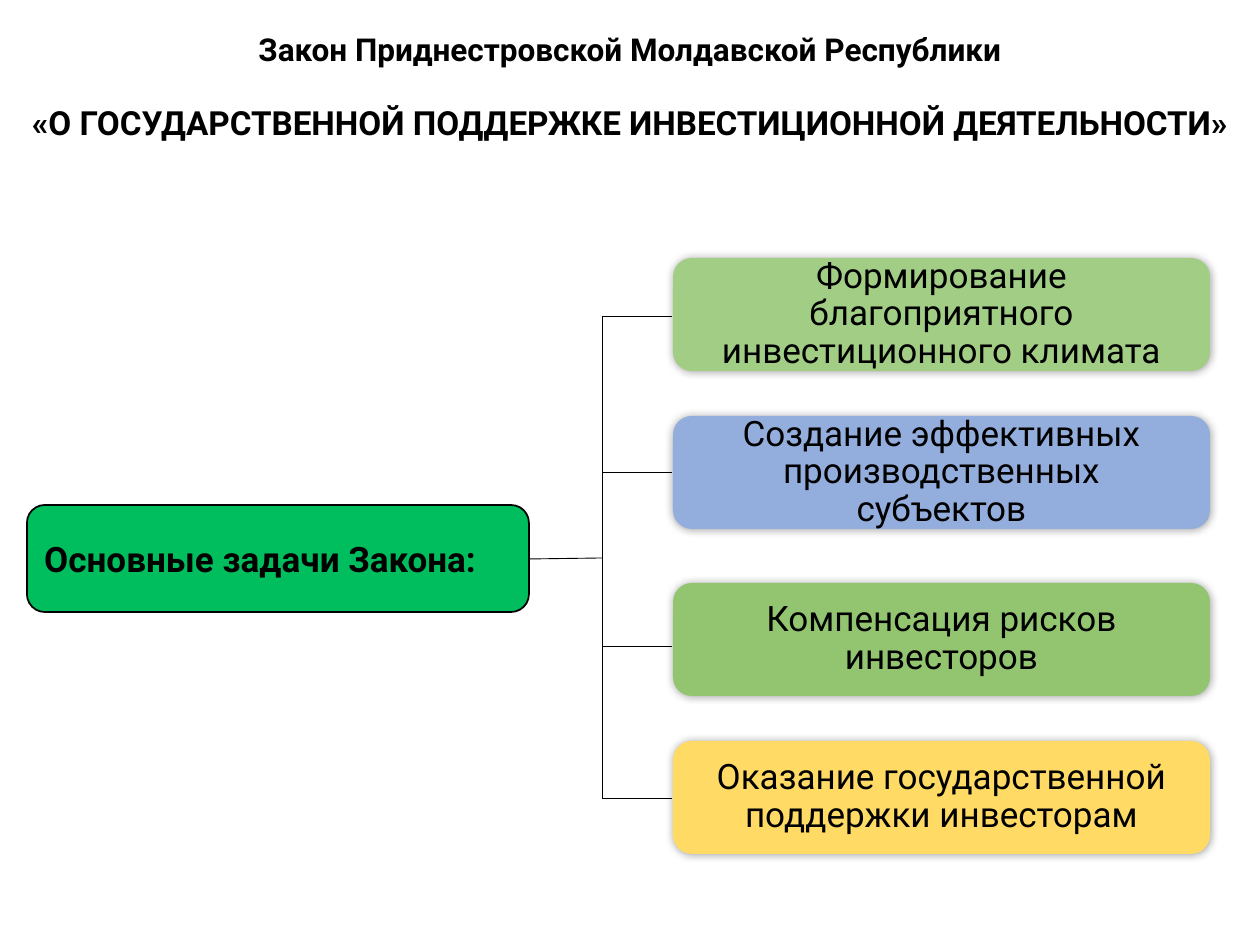
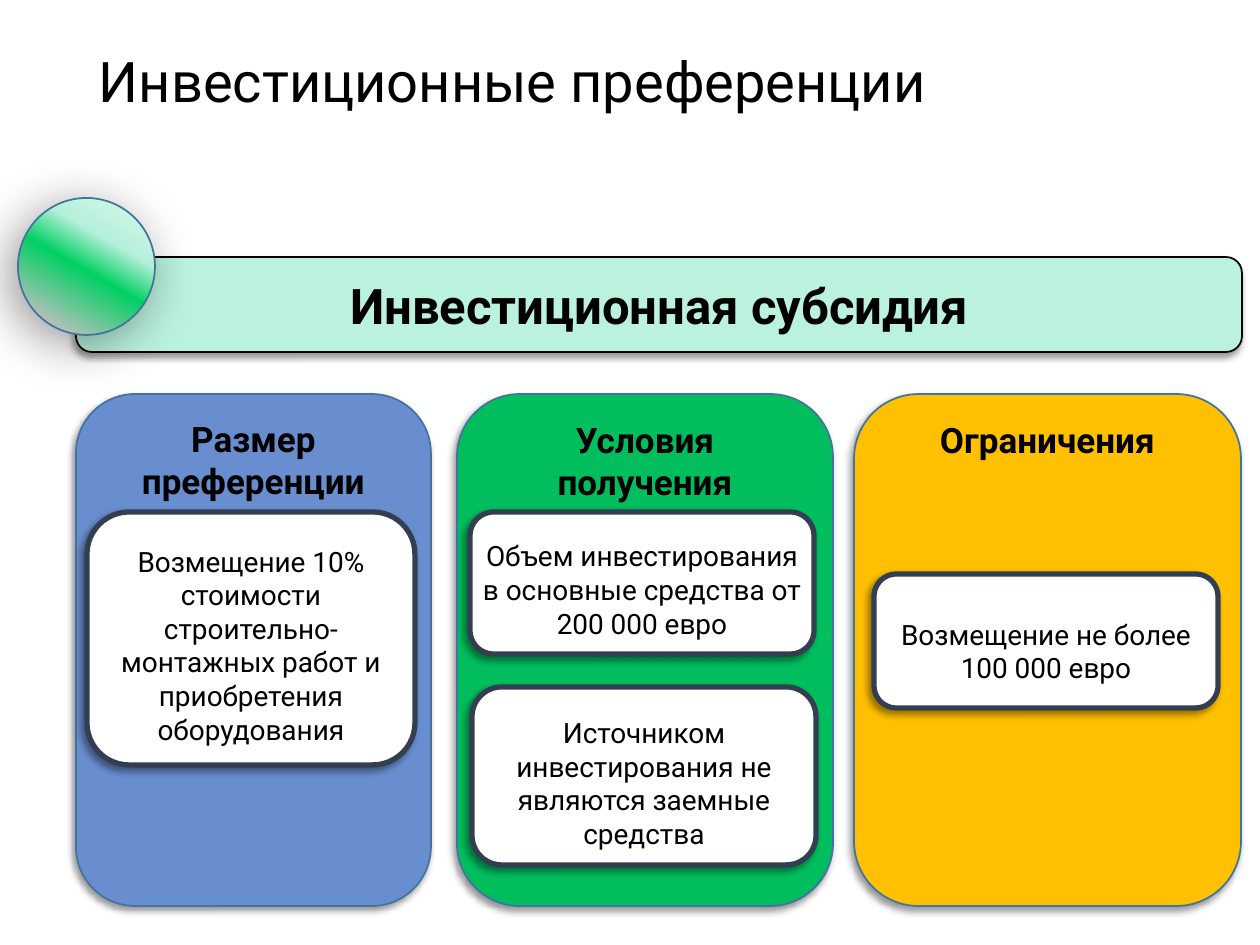
import lxml.etree
import pptx
import pptx.dml.color
import pptx.enum.shapes
import pptx.enum.text
import pptx.oxml.ns
import pptx.util

PX = 914400 / 126
FONT = "Roboto"
BLACK, WHITE = "000000", "FFFFFF"
GREEN, OUTLINE, CARD_EDGE = "00BE5E", "43739E", "333F50"
GLOW = (5, 0, 0)
DROP = (4, 3, 135)
DEEP = (30, 7, 135)
LEFT, CENTER = pptx.enum.text.PP_ALIGN.LEFT, pptx.enum.text.PP_ALIGN.CENTER
TOP, MIDDLE = pptx.enum.text.MSO_ANCHOR.TOP, pptx.enum.text.MSO_ANCHOR.MIDDLE
ROUNDED = pptx.enum.shapes.MSO_SHAPE.ROUNDED_RECTANGLE
OVAL = pptx.enum.shapes.MSO_SHAPE.OVAL
INSETS = (12, 6, 12, 6)


def px(length):
    """Turn pixels into EMU."""
    return pptx.util.Emu(round(length * PX))


def color(value):
    """Turn a hex string into a colour."""
    return pptx.dml.color.RGBColor.from_string(value)


def add_child(parent, tag, **attributes):
    """Append a DrawingML element to its parent."""
    child = lxml.etree.SubElement(parent, pptx.oxml.ns.qn(tag))
    for name, value in attributes.items():
        child.set(name, str(value))
    return child


def add_shadow(shape, blur, distance, angle):
    """Give a shape a black shadow at 40 percent; lengths in points."""
    effects = shape._element.spPr.find(pptx.oxml.ns.qn("a:effectLst"))
    shadow = add_child(effects, "a:outerShdw", blurRad=blur * 12700, dist=distance * 12700,
                       dir=angle * 60000, algn="ctr", rotWithShape=0)
    add_child(add_child(shadow, "a:srgbClr", val=BLACK), "a:alpha", val=40000)


def add_panel(slide, box, fill, line=None, width=1, shadow=None, kind=ROUNDED):
    """Draw a preset shape in a box."""
    shape = slide.shapes.add_shape(kind, *map(px, box))
    shape.shadow.inherit = False
    shape.fill.solid()
    shape.fill.fore_color.rgb = color(fill)
    if line:
        shape.line.color.rgb = color(line)
        shape.line.width = pptx.util.Pt(width)
    else:
        shape.line.fill.background()
    if shadow:
        add_shadow(shape, *shadow)
    return shape


def write(shape, lines, size, bold=False, align=CENTER, anchor=TOP, insets=INSETS, spacing=1.0):
    """Write one paragraph per line into a shape."""
    frame = shape.text_frame
    frame.word_wrap = True
    frame.vertical_anchor = anchor
    frame.margin_left, frame.margin_top, frame.margin_right, frame.margin_bottom = map(px, insets)
    frame.text = "\n".join(lines)
    for paragraph in frame.paragraphs:
        paragraph.alignment = align
        paragraph.line_spacing = spacing
        paragraph.font.name = FONT
        paragraph.font.size = pptx.util.Pt(size)
        paragraph.font.bold = bold
        paragraph.font.color.rgb = color(BLACK)
    return frame


def add_title(slide, box, lines, size, **style):
    """Write the slide title in a text box."""
    return write(slide.shapes.add_textbox(*map(px, box)), lines, size, spacing=0.9, **style)


def add_line(slide, *ends):
    """Draw a thin black line between two points."""
    line = slide.shapes.add_connector(pptx.enum.shapes.MSO_CONNECTOR.STRAIGHT, *map(px, ends))
    line.line.color.rgb = color(BLACK)
    line.line.width = pptx.util.Pt(0.5)
    add_child(line._element.spPr, "a:effectLst")


def add_task_tree(slide, box, root, tasks):
    """Draw the root box and its tasks, joined by a rail."""
    left, top, width, height = box
    root_width, task_width, task_height = 502, 537, 113
    task_left = left + width - task_width
    rail = left + 575
    panel = add_panel(slide, (left, top + 247, root_width, 107), GREEN, BLACK)
    write(panel, [root], 20, bold=True, align=LEFT, anchor=MIDDLE)
    for offset, branch, fill, text in tasks:
        panel = add_panel(slide, (task_left, top + offset, task_width, task_height), fill, shadow=GLOW)
        write(panel, [text], 20, anchor=MIDDLE, insets=(20, 0, 20, 0), spacing=0.9)
        add_line(slide, task_left - 1, top + branch, rail, top + branch)
    add_line(slide, rail, top + tasks[0][1], rail, top + tasks[-1][1])
    add_line(slide, left + root_width, top + 301, rail, top + 300)


def add_ball(slide, box):
    """Draw the shaded green ball."""
    ball = add_panel(slide, box, GREEN, OUTLINE, shadow=DEEP, kind=OVAL)
    ball.fill.gradient()
    ball.fill.gradient_angle = 60
    stops = ball._element.spPr.find(".//" + pptx.oxml.ns.qn("a:gsLst"))
    for stop in list(stops):
        stops.remove(stop)
    for position, shade in ((12, "BFBFBF"), (48, "01D063"), (68, "B5F0DA"), (100, "DAFAED")):
        add_child(add_child(stops, "a:gs", pos=position * 1000), "a:srgbClr", val=shade)


def add_banner(slide, box, text):
    """Draw the heading banner with the ball on its corner."""
    left, top, width, height = box
    banner = add_panel(slide, box, "BAF2DD", BLACK, shadow=DROP)
    write(banner, [text], 28, bold=True, anchor=MIDDLE)
    add_ball(slide, (left - 58, top - 59, 137, 137))


def add_column(slide, box, fill, heading, cards):
    """Draw a headed column and the cards inside it."""
    left, top, width, height = box
    write(add_panel(slide, box, fill, OUTLINE, shadow=DROP), [heading], 20, bold=True)
    for (x, y, card_width, card_height), anchor, lines in cards:
        card = add_panel(slide, (left + x, top + y, card_width, card_height),
                         WHITE, CARD_EDGE, 3, DROP)
        write(card, lines, 16, anchor=anchor, insets=(0, 20, 0, 0))


def build_law_slide(slide):
    """Build the slide on the tasks of the law."""
    frame = add_title(slide, (-10, 34, 1280, 144), [
        "Закон Приднестровской Молдавской Республики",
        "«О ГОСУДАРСТВЕННОЙ ПОДДЕРЖКЕ ИНВЕСТИЦИОННОЙ ДЕЯТЕЛЬНОСТИ»",
    ], 18, bold=True, insets=(12, 0, 12, 0))
    law_name = frame.paragraphs[1]
    law_name.font.size = pptx.util.Pt(19)
    law_name.space_before = pptx.util.Pt(22)
    add_task_tree(slide, (27, 258, 1183, 596), "Основные задачи Закона:", [
        (0, 58, "A2CD85", "Формирование благоприятного инвестиционного климата"),
        (158, 214, "93ADDD", "Создание эффективных производственных субъектов"),
        (325, 388, "93C571", "Компенсация рисков инвесторов"),
        (483, 540, "FFDA65", "Оказание государственной поддержки инвесторам"),
    ])


def build_subsidy_slide(slide):
    """Build the slide on the investment subsidy."""
    add_title(slide, (87, 0, 1086, 169), ["Инвестиционные преференции"], 32,
              align=LEFT, anchor=MIDDLE)
    add_banner(slide, (76, 257, 1166, 95), "Инвестиционная субсидия")
    columns = [
        (76, 355, "698ED0", "Размер преференции", [
            ((11, 118, 328, 253), TOP, [
                "Возмещение 10% стоимости строительно-монтажных работ и приобретения оборудования"]),
        ]),
        (457, 376, GREEN, "Условия получения", [
            ((13, 118, 344, 142), TOP, [
                "Объем инвестирования в основные средства от", "200 000 евро"]),
            ((15, 293, 344, 178), TOP, [
                "Источником инвестирования не являются заемные средства"]),
        ]),
        (854, 387, "FFC000", "Ограничения", [
            ((20, 180, 344, 134), MIDDLE, ["Возмещение не более 100 000 евро"]),
        ]),
    ]
    for left, width, fill, heading, cards in columns:
        add_column(slide, (left, 394, width, 512), fill, heading, cards)


def main():
    """Build and save the presentation."""
    presentation = pptx.Presentation()
    presentation.slide_width, presentation.slide_height = px(1260), px(945)
    for build in (build_law_slide, build_subsidy_slide):
        build(presentation.slides.add_slide(presentation.slide_layouts[6]))
    presentation.save("out.pptx")


if __name__ == "__main__":
    main()
